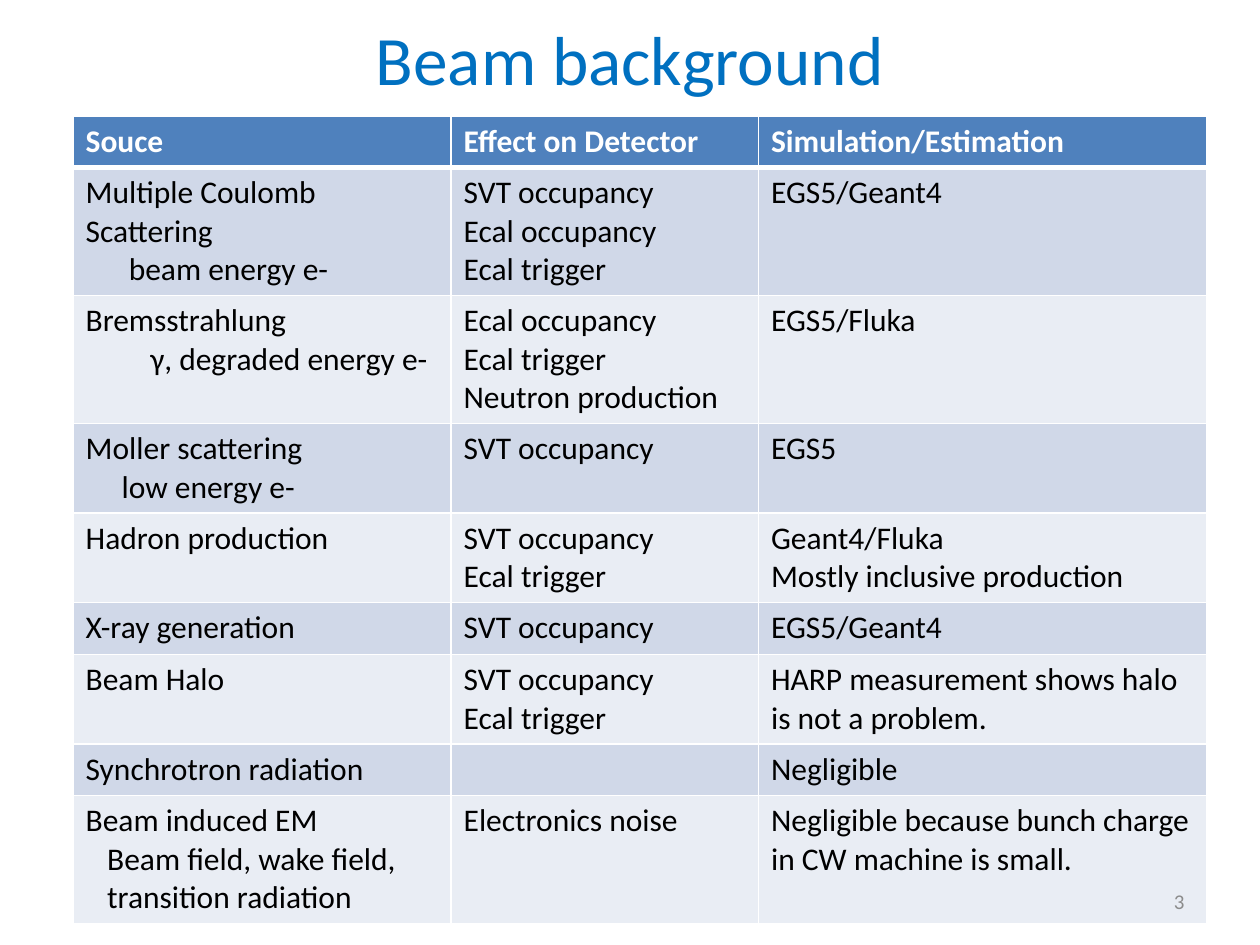
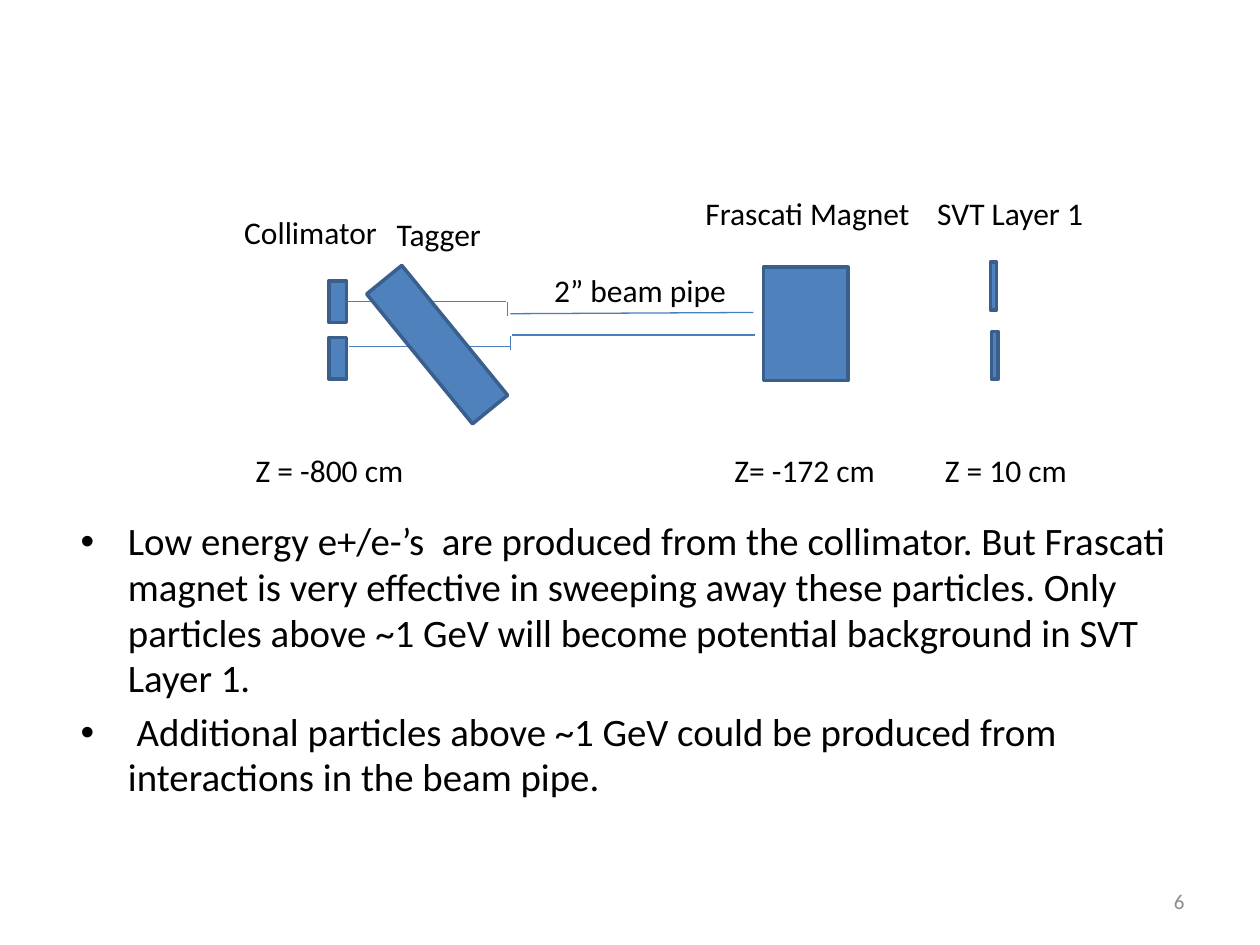
"""Build two slides on beam background sources and the collimator beam line."""
from typing import NamedTuple

import lxml.etree
import pptx
import pptx.dml.color
import pptx.enum.shapes
import pptx.enum.text
import pptx.oxml.ns
import pptx.util

RGB = pptx.dml.color.RGBColor
ANCHOR = pptx.enum.text.MSO_ANCHOR
ALIGN = pptx.enum.text.PP_ALIGN
FIT = pptx.enum.text.MSO_AUTO_SIZE
Pt = pptx.util.Pt
qn = pptx.oxml.ns.qn

WHITE = RGB(0xFF, 0xFF, 0xFF)
BLACK = RGB(0, 0, 0)
TITLE_BLUE = RGB(0x00, 0x70, 0xC0)
FILL_BLUE = RGB(0x4F, 0x81, 0xBD)
EDGE_BLUE = RGB(0x3A, 0x5F, 0x8C)
PIPE_BLUE = RGB(0x4B, 0x7E, 0xBC)
BANDS = (RGB(0xD0, 0xD8, 0xE8), RGB(0xE9, 0xED, 0xF4))
NUMBER_GREY = RGB(0x8C, 0x8C, 0x8C)

FONT = "Calibri"
TEXT_SIZE = 18
UNIT = pptx.util.Inches(0.1)
SLIDE_COLS, SLIDE_ROWS = 100, 75
SPACE_WIDTH = 0.57
LINE_ROWS, CELL_PADDING = 3, 1.1
LABEL_ROWS = 4


class Area(NamedTuple):
    """A rectangle in grid columns and rows."""
    col: float
    row: float
    cols: float
    rows: float


class Label(NamedTuple):
    """A one-line caption."""
    text: str
    col: float
    row: float
    cols: float


class Pipe(NamedTuple):
    """A straight wall of the beam pipe."""
    col: float
    row: float
    end_col: float
    end_row: float


class Line(NamedTuple):
    """A table line, indented by a number of space widths."""
    text: str
    indent: int = 0


class Source(NamedTuple):
    """A background source with its effects and how it was estimated."""
    name: list[Line]
    effects: list[Line]
    estimate: list[Line]
    lines: int


SVT, ECAL, TRIGGER = Line("SVT occupancy"), Line("Ecal occupancy"), Line("Ecal trigger")
HEADINGS = Source([Line("Souce")], [Line("Effect on Detector")], [Line("Simulation/Estimation")], 1)
SOURCES = [
    Source([Line("Multiple Coulomb Scattering"), Line("beam energy e-", 6)],
           [SVT, ECAL, TRIGGER], [Line("EGS5/Geant4")], 3),
    Source([Line("Bremsstrahlung"), Line("γ, degraded energy e-", 9)],
           [ECAL, TRIGGER, Line("Neutron production")], [Line("EGS5/Fluka")], 3),
    Source([Line("Moller scattering"), Line("low energy e-", 5)], [SVT], [Line("EGS5")], 2),
    Source([Line("Hadron production")], [SVT, TRIGGER],
           [Line("Geant4/Fluka"), Line("Mostly inclusive production")], 2),
    Source([Line("X-ray generation")], [SVT], [Line("EGS5/Geant4")], 1),
    Source([Line("Beam Halo")], [SVT, TRIGGER],
           [Line("HARP measurement shows halo is not a problem.")], 2),
    Source([Line("Synchrotron radiation")], [], [Line("Negligible")], 1),
    Source([Line("Beam induced EM"), Line("Beam field, wake field,", 3),
            Line("transition radiation", 3)], [Line("Electronics noise")],
           [Line("Negligible because bunch charge in CW machine is small.")], 3),
]
SOURCE_COLS = (30, 24.4, 35.6)

TITLE_AREA = Area(5, 1.5, 90, 6.2)
NUMBER_AREA = Area(71.7, 69.5, 23.3, 4)
BODY_AREA = Area(5.4, 40.7, 90, 23)
UPPER_COLLIMATOR = Area(26.1, 22.3, 1.4, 3.3)
LOWER_COLLIMATOR = UPPER_COLLIMATOR._replace(row=26.8)
MAGNET = Area(60.6, 21.2, 6.7, 9)
SVT_UPPER = Area(78.6, 20.8, 0.5, 3.8)
SVT_LOWER = Area(78.7, 26.3, 0.5, 3.8)
TAGGER = Area(32.9, 20.7, 3.6, 13.3)
TAGGER_ANGLE = 320.8

WIDE_PIPE_TOP = Pipe(27.5, 23.95, 40.2, 23.95)
OTHER_PIPES = [
    Pipe(27.7, 27.5, 40.5, 27.5),
    Pipe(40.5, 24.9, 59.8, 24.8),
    Pipe(40.6, 26.6, 59.9, 26.6),
    Pipe(40.3, 24, 40.3, 25.1),
    Pipe(40.5, 26.7, 40.5, 27.8),
]
LABELS = [
    Label("Collimator", 18.4, 16.4, 12.7),
    Label("Tagger", 30.5, 16.6, 8.8),
    Label("2” beam pipe", 43, 21, 15.8),
    Label("Frascati Magnet", 55, 14.9, 18.4),
    Label("SVT Layer 1", 73.4, 14.9, 13.7),
    Label("Z = -800 cm", 19.3, 35.3, 13.9),
    Label("Z= -172 cm", 57.3, 35.3, 13.3),
    Label("Z = 10 cm", 74, 35.3, 11.8),
]
FINDINGS = [
    "Low energy e+/e-’s  are produced from the collimator. But Frascati magnet is very "
    "effective in sweeping away these particles. Only particles above ~1 GeV will become "
    "potential background in SVT Layer 1.",
    " Additional particles above ~1 GeV could be produced from interactions in the beam pipe.",
]


def grid(*counts: float) -> list[int]:
    """Turn grid counts into slide lengths."""
    return [round(count * UNIT) for count in counts]


def add_run(paragraph, text: str, size: float, color: RGB, bold: bool = False) -> None:
    """Append one formatted run."""
    run = paragraph.add_run()
    run.text = text
    run.font.name, run.font.size, run.font.bold = FONT, Pt(size), bold
    run.font.color.rgb = color


def paragraphs(frame, count: int) -> list:
    """Return the first paragraph and as many new ones as are needed."""
    return [frame.paragraphs[0] if index == 0 else frame.add_paragraph() for index in range(count)]


def place(shape, area: Area) -> None:
    """Move and size a placeholder and keep its text at a fixed size."""
    shape.left, shape.top, shape.width, shape.height = grid(*area)
    shape.text_frame.auto_size = FIT.NONE


def add_number(slide, number: int) -> None:
    """Add the slide number at the lower right."""
    frame = slide.shapes.add_textbox(*grid(*NUMBER_AREA)).text_frame
    frame.word_wrap = True
    frame.vertical_anchor = ANCHOR.MIDDLE
    frame.paragraphs[0].alignment = ALIGN.RIGHT
    add_run(frame.paragraphs[0], str(number), 12, NUMBER_GREY)


def add_block(slide, area: Area, angle: float = 0):
    """Add one rectangular beam line part."""
    block = slide.shapes.add_shape(pptx.enum.shapes.MSO_SHAPE.RECTANGLE, *grid(*area))
    block.shadow.inherit = False
    block.rotation = angle
    block.fill.solid()
    block.fill.fore_color.rgb = FILL_BLUE
    block.line.color.rgb, block.line.width = EDGE_BLUE, Pt(2)
    return block


def add_pipe(slide, pipe: Pipe):
    """Add one beam pipe wall."""
    wall = slide.shapes.add_connector(pptx.enum.shapes.MSO_CONNECTOR.STRAIGHT, *grid(*pipe))
    wall.line.color.rgb, wall.line.width = PIPE_BLUE, Pt(0.75)
    lxml.etree.SubElement(wall._element.spPr, qn("a:effectLst"))
    return wall


def add_label(slide, label: Label) -> None:
    """Add one caption that does not wrap."""
    area = Area(label.col, label.row, label.cols, LABEL_ROWS)
    frame = slide.shapes.add_textbox(*grid(*area)).text_frame
    frame.word_wrap = False
    frame.auto_size = FIT.SHAPE_TO_FIT_TEXT
    add_run(frame.paragraphs[0], label.text, TEXT_SIZE, BLACK)


def set_borders(cell, bottom: float) -> None:
    """Draw white borders around a cell."""
    properties = cell._tc.get_or_add_tcPr()
    for side, width in (("L", 1), ("R", 1), ("T", 1), ("B", bottom)):
        border = lxml.etree.SubElement(properties, qn(f"a:ln{side}"), w=str(Pt(width)))
        fill = lxml.etree.SubElement(border, qn("a:solidFill"))
        lxml.etree.SubElement(fill, qn("a:srgbClr"), val=str(WHITE))


def fill_cell(cell, lines: list[Line], fill: RGB, heading: bool) -> None:
    """Format one table cell and write its lines."""
    set_borders(cell, 3 if heading else 1)
    cell.fill.solid()
    cell.fill.fore_color.rgb = fill
    for paragraph, line in zip(paragraphs(cell.text_frame, len(lines)), lines):
        if line.indent:
            margin = grid(line.indent * SPACE_WIDTH)[0]
            paragraph._p.get_or_add_pPr().set("marL", str(margin))
        add_run(paragraph, line.text, TEXT_SIZE, WHITE if heading else BLACK, heading)


def build_sources(deck) -> None:
    """Build the table of background sources."""
    slide = deck.slides.add_slide(deck.slide_layouts[5])
    title = slide.shapes.title
    place(title, TITLE_AREA)
    title.text_frame.vertical_anchor = ANCHOR.MIDDLE
    heading = title.text_frame.paragraphs[0]
    heading.alignment = ALIGN.CENTER
    add_run(heading, "Beam background", 39.6, TITLE_BLUE)

    rows = [HEADINGS, *SOURCES]
    heights = [source.lines * LINE_ROWS + CELL_PADDING for source in rows]
    area = Area(5.8, 9.2, sum(SOURCE_COLS), sum(heights))
    table = slide.shapes.add_table(len(rows), len(SOURCE_COLS), *grid(*area)).table
    for column, width in zip(table.columns, grid(*SOURCE_COLS)):
        column.width = width
    for index, (source, height) in enumerate(zip(rows, grid(*heights))):
        table.rows[index].height = height
        fill = BANDS[(index - 1) % 2] if index else FILL_BLUE
        for col, lines in enumerate((source.name, source.effects, source.estimate)):
            fill_cell(table.cell(index, col), lines, fill, index == 0)
    add_number(slide, 3)


def build_beam_line(deck) -> None:
    """Build the beam line sketch with its findings."""
    slide = deck.slides.add_slide(deck.slide_layouts[1])
    title = slide.shapes.title._element
    title.getparent().remove(title)
    body = slide.placeholders[1]
    place(body, BODY_AREA)
    for paragraph, finding in zip(paragraphs(body.text_frame, len(FINDINGS)), FINDINGS):
        paragraph.line_spacing = 0.98
        add_run(paragraph, finding, 22.2, BLACK)

    collimator = add_block(slide, UPPER_COLLIMATOR)
    for part in (LOWER_COLLIMATOR, MAGNET, SVT_UPPER, SVT_LOWER):
        add_block(slide, part)
    add_pipe(slide, WIDE_PIPE_TOP).begin_connect(collimator, 3)
    for pipe in OTHER_PIPES:
        add_pipe(slide, pipe)
    add_block(slide, TAGGER, TAGGER_ANGLE)
    for label in LABELS:
        add_label(slide, label)
    add_number(slide, 6)


def main() -> None:
    """Build and save the presentation."""
    deck = pptx.Presentation()
    deck.slide_width, deck.slide_height = grid(SLIDE_COLS, SLIDE_ROWS)
    build_sources(deck)
    build_beam_line(deck)
    deck.save("out.pptx")


if __name__ == "__main__":
    main()
